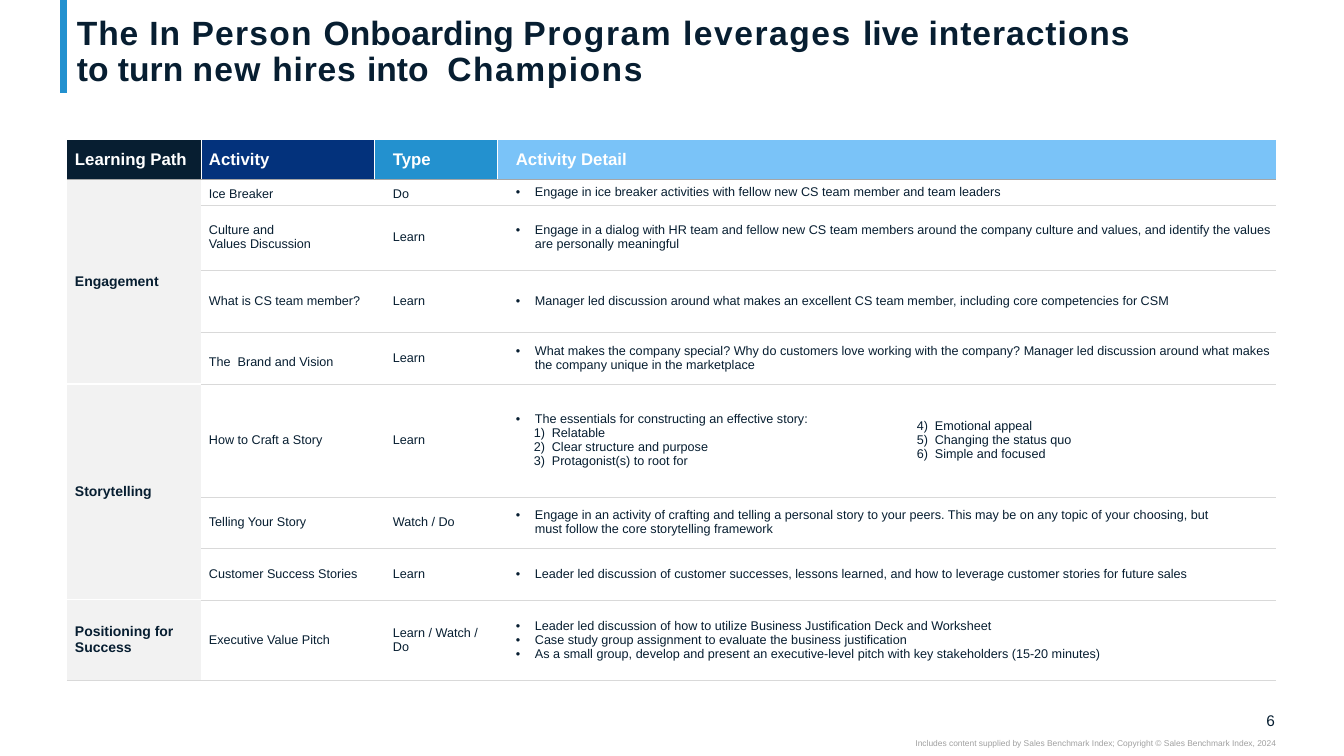
"""Builds the onboarding programme slide with its learning path table."""
from dataclasses import dataclass
from typing import NamedTuple, Optional

import lxml.etree
import pptx
import pptx.dml.color
import pptx.enum.shapes
import pptx.enum.text
import pptx.oxml.ns
import pptx.slide
import pptx.table
import pptx.text.text
import pptx.util

PX_PER_INCH = 100.8
NO_STYLE = "{2D5ABB26-0587-4C30-8999-92F81FD0307C}"
Align = pptx.enum.text.PP_ALIGN
Anchor = pptx.enum.text.MSO_ANCHOR
qn = pptx.oxml.ns.qn


@dataclass(frozen=True)
class Theme:
    font: str = "Arial"
    ink: str = "071E31"
    accent: str = "2391CF"
    white: str = "FFFFFF"
    stage_fill: str = "F2F2F2"
    rule: str = "D9D9D9"
    header_rule: str = "A6A6A6"
    credit: str = "A0A0A0"
    title_size: int = 24
    header_size: int = 12
    number_size: int = 11
    stage_size: int = 10
    body_size: int = 9
    credit_size: int = 6


class Indent(NamedTuple):
    left: int = 0
    hang: int = 0
    level: int = 0
    character: str = ""
    start: int = 0


class Column(NamedTuple):
    heading: str
    width: int
    fill: str
    indent: Indent


class Activity(NamedTuple):
    height: int
    name: str
    kind: str
    details: list[str]
    top_inset: int = 0
    kind_top_inset: int = 0
    right_inset: int = 0
    steps: tuple[str, ...] = ()
    more_steps: tuple[str, ...] = ()


class Label(NamedTuple):
    text: str
    box: tuple[int, int, int, int]
    size: int
    color: str
    anchor: Anchor


THEME = Theme()
PLAIN = Indent()
INSET = Indent(left=11)
BULLET = Indent(30, -19, character="•")
STEP = Indent(47, -18, level=1, start=1)
MORE_STEP = Indent(49, -18, start=4)

TITLE_LINES = [
    [("The ", 60), ("In ", 70), ("Person ", 90), ("Onboarding ", 0),
     ("Program leverages ", 110), ("live ", 0), ("interactions", 70)],
    [("to turn ", 0), ("new ", 90), ("hires ", 60), ("into  ", 0), ("Champions", 110)],
]
COLUMNS = [
    Column("Learning Path", 134, THEME.ink, PLAIN),
    Column("Activity", 173, "03327C", PLAIN),
    Column("Type", 123, THEME.accent, INSET),
    Column("Activity Detail", 381, "7AC3F8", INSET),
    Column("", 398, "7AC3F8", INSET),
]
HEADER_HEIGHT = 39
STAGES = {
    "Engagement": [
        Activity(26, "Ice Breaker", "Do", [
            "Engage in ice breaker activities with fellow new CS team member and team leaders"],
            top_inset=4, kind_top_inset=4),
        Activity(65, "Culture and\vValues Discussion", "Learn", [
            "Engage in a dialog with HR team and fellow new CS team members around the company "
            "culture and values, and identify the values are personally meaningful"]),
        Activity(62, "What is CS team member?", "Learn", [
            "Manager led discussion around what makes an excellent CS team member, "
            "including core competencies for CSM"]),
        Activity(52, "The  Brand and Vision", "Learn", [
            "What makes the company special? Why do customers love working with the company? "
            "Manager led discussion around what makes the company unique in the marketplace"],
            top_inset=8),
    ],
    "Storytelling": [
        Activity(113, "How to Craft a Story", "Learn", [
            "The essentials for constructing an effective story:"],
            steps=("Relatable", "Clear structure and purpose", "Protagonist(s) to root for"),
            more_steps=("Emotional appeal", "Changing the status quo", "Simple and focused")),
        Activity(51, "Telling Your Story", "Watch / Do", [
            "Engage in an activity of crafting and telling a personal story to your peers. This may "
            "be on any topic of your choosing, but must follow the core storytelling framework"],
            right_inset=50),
        Activity(52, "Customer Success Stories", "Learn", [
            "Leader led discussion of customer successes, lessons learned, "
            "and how to leverage customer stories for future sales"]),
    ],
    "Positioning for Success": [
        Activity(80, "Executive Value Pitch", "Learn / Watch / Do", [
            "Leader led discussion of how to utilize Business Justification Deck and Worksheet",
            "Case study group assignment to evaluate the business justification",
            "As a small group, develop and present an executive-level pitch "
            "with key stakeholders (15-20 minutes)"]),
    ],
}
LABELS = [
    Label("6", (1242, 711, 33, 19), THEME.number_size, THEME.ink, Anchor.MIDDLE),
    Label("Includes content supplied by Sales Benchmark Index; Copyright © Sales Benchmark Index, 2024",
          (756, 738, 520, 10), THEME.credit_size, THEME.credit, Anchor.TOP),
]


def px(length: int) -> pptx.util.Emu:
    """Converts whole pixels to EMU."""
    return pptx.util.Emu(round(length * 914400 / PX_PER_INCH))


def rgb(color: str) -> pptx.dml.color.RGBColor:
    """Reads a hexadecimal colour."""
    return pptx.dml.color.RGBColor.from_string(color)


def style_text(paragraph: pptx.text.text._Paragraph, size: int, color: str, bold: bool = False) -> None:
    """Formats all runs and line breaks of a paragraph."""
    for run in paragraph.runs:
        run.font.name, run.font.size, run.font.bold = THEME.font, pptx.util.Pt(size), bold
        run.font.color.rgb = rgb(color)
    for line_break in paragraph._p.findall(qn("a:br")):
        lxml.etree.SubElement(line_break, qn("a:rPr"), sz=str(size * 100))


def set_indent(paragraph: pptx.text.text._Paragraph, indent: Indent) -> None:
    """Applies indent, level and bullet to a paragraph."""
    paragraph.level = indent.level
    properties = paragraph._p.get_or_add_pPr()
    properties.set("marL", str(px(indent.left)))
    properties.set("indent", str(px(indent.hang)))
    if indent.character:
        lxml.etree.SubElement(properties, qn("a:buFont"), typeface=THEME.font)
        lxml.etree.SubElement(properties, qn("a:buChar"), char=indent.character)
    elif indent.start:
        lxml.etree.SubElement(properties, qn("a:buAutoNum"), type="arabicParenR", startAt=str(indent.start))


def fill_cell(cell: pptx.table._Cell, items: list[tuple[str, Indent]], size: int = THEME.body_size,
              color: str = THEME.ink, bold: bool = False, top: int = 0, right: int = 0) -> None:
    """Writes indented paragraphs into a cell."""
    cell.margin_top, cell.margin_right = px(top), px(right)
    cell.text_frame.text = "\n".join(text for text, _ in items)
    for paragraph, (_, indent) in zip(cell.text_frame.paragraphs, items):
        set_indent(paragraph, indent)
        style_text(paragraph, size, color, bold)


def add_border(cell: pptx.table._Cell, side: str, color: str, width: float) -> None:
    """Draws one edge of a cell."""
    line = lxml.etree.SubElement(cell._tc.get_or_add_tcPr(), qn(f"a:ln{side}"), w=str(pptx.util.Pt(width)))
    fill = lxml.etree.SubElement(line, qn("a:solidFill"))
    lxml.etree.SubElement(fill, qn("a:srgbClr"), val=color)


def lower_edge(row: int, column: int, last_row: int) -> tuple[str, float]:
    """Gives colour and width of the rule below a cell."""
    if row == 0:
        return THEME.header_rule, 0.5
    return (THEME.white, 1) if column == 0 and row < last_row else (THEME.rule, 0.5)


def style_cell(cell: pptx.table._Cell, row: int, column: int, last_row: int) -> None:
    """Sets borders, fill and margins of a cell."""
    if row == 0 and 0 < column < 4:
        add_border(cell, "L", THEME.white, 0.5)
    if row == 0 and column < 3:
        add_border(cell, "R", THEME.white, 0.5)
    if row:
        add_border(cell, "T", *lower_edge(row - 1, column, last_row))
    add_border(cell, "B", *lower_edge(row, column, last_row))
    if row and column:
        cell.fill.background()
    else:
        cell.fill.solid()
        cell.fill.fore_color.rgb = rgb(THEME.stage_fill if row else COLUMNS[column].fill)
    cell.margin_left, cell.vertical_anchor = px(8), Anchor.MIDDLE
    cell.margin_top = cell.margin_right = cell.margin_bottom = 0


def add_program_table(slide: pptx.slide.Slide) -> None:
    """Adds the learning path table."""
    activities = [activity for group in STAGES.values() for activity in group]
    heights = [HEADER_HEIGHT] + [activity.height for activity in activities]
    widths = [column.width for column in COLUMNS]
    table = slide.shapes.add_table(len(heights), len(widths), px(67), px(140),
                                   px(sum(widths)), px(sum(heights))).table
    table._tbl.tblPr.find(qn("a:tableStyleId")).text = NO_STYLE
    table.horz_banding = table.first_row = False
    for column, width in zip(table.columns, widths):
        column.width = px(width)
    for row, height in enumerate(heights):
        table.rows[row].height = px(height)
        for column in range(len(widths)):
            style_cell(table.cell(row, column), row, column, len(activities))
    for index, column in enumerate(COLUMNS[:4]):
        fill_cell(table.cell(0, index), [(column.heading, column.indent)],
                  THEME.header_size, THEME.white, True)
    table.cell(0, 3).merge(table.cell(0, 4))
    for row, activity in enumerate(activities, 1):
        fill_cell(table.cell(row, 1), [(activity.name, PLAIN)], top=activity.top_inset)
        fill_cell(table.cell(row, 2), [(activity.kind, INSET)], top=activity.kind_top_inset, right=8)
        details = [(text, BULLET) for text in activity.details] + [(text, STEP) for text in activity.steps]
        fill_cell(table.cell(row, 3), details, right=activity.right_inset)
        if activity.more_steps:
            fill_cell(table.cell(row, 4), [(text, MORE_STEP) for text in activity.more_steps])
        else:
            table.cell(row, 3).merge(table.cell(row, 4))
    first = 1
    for stage, group in STAGES.items():
        fill_cell(table.cell(first, 0), [(stage, PLAIN)], THEME.stage_size, bold=True)
        if len(group) > 1:
            table.cell(first, 0).merge(table.cell(first + len(group) - 1, 0))
        first += len(group)


def add_title(slide: pptx.slide.Slide) -> None:
    """Fills the title placeholder and draws its accent bar."""
    title = slide.shapes.title
    title.left, title.top, title.width, title.height = map(px, (67, 4, 1209, 85))
    frame = title.text_frame
    frame.auto_size, frame.word_wrap = pptx.enum.text.MSO_AUTO_SIZE.NONE, True
    frame.vertical_anchor = Anchor.BOTTOM
    frame.margin_left = frame.margin_right = px(10)
    frame.margin_top = frame.margin_bottom = 0
    paragraph = frame.paragraphs[0]
    paragraph.alignment, paragraph.line_spacing = Align.LEFT, 0.9
    for index, fragments in enumerate(TITLE_LINES):
        if index:
            paragraph.add_line_break()
        for text, spacing in fragments:
            run = paragraph.add_run()
            run.text = text
            run.font._element.set("spc", str(spacing))
    style_text(paragraph, THEME.title_size, THEME.ink, True)
    bar = slide.shapes.add_connector(pptx.enum.shapes.MSO_CONNECTOR.STRAIGHT, px(64), 0, px(64), px(93))
    bar.line.color.rgb, bar.line.width = rgb(THEME.accent), pptx.util.Pt(5)
    lxml.etree.SubElement(bar._element.spPr, qn("a:effectLst"))


def add_label(slide: pptx.slide.Slide, label: Label) -> None:
    """Adds a right-aligned footer text."""
    frame = slide.shapes.add_textbox(*map(px, label.box)).text_frame
    frame.word_wrap, frame.vertical_anchor = True, label.anchor
    frame.margin_left = frame.margin_top = frame.margin_right = frame.margin_bottom = 0
    frame.text = label.text
    frame.paragraphs[0].alignment = Align.RIGHT
    style_text(frame.paragraphs[0], label.size, label.color)


def main() -> None:
    """Builds and saves the presentation."""
    presentation = pptx.Presentation()
    presentation.slide_width, presentation.slide_height = px(1344), px(756)
    slide = presentation.slides.add_slide(presentation.slide_layouts[5])
    add_title(slide)
    add_program_table(slide)
    for label in LABELS:
        add_label(slide, label)
    presentation.save("out.pptx")


if __name__ == "__main__":
    main()
